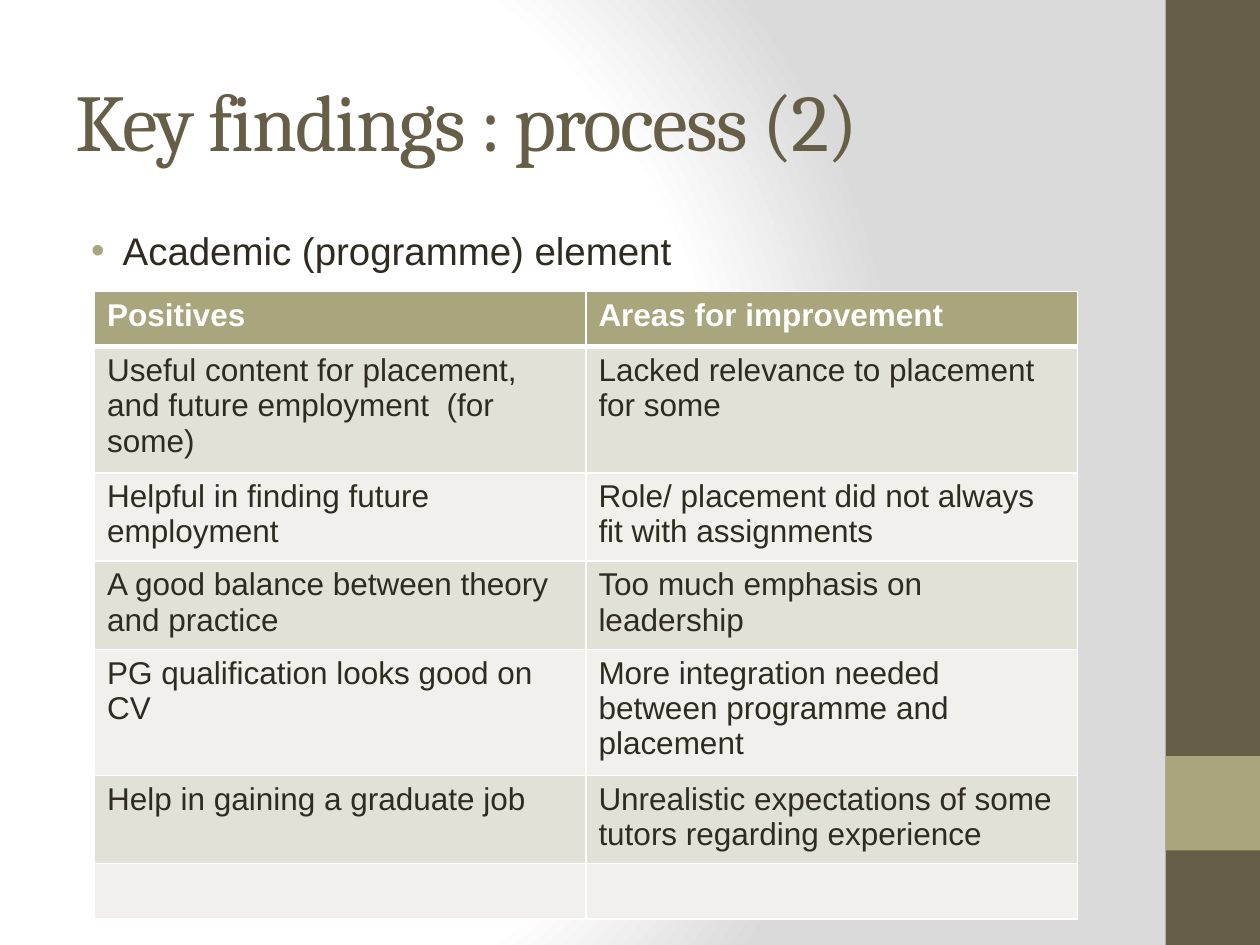
from pptx import Presentation
from pptx.dml.color import RGBColor
from pptx.enum.shapes import MSO_SHAPE as Shape
from pptx.enum.text import MSO_ANCHOR as Anchor
from pptx.oxml import parse_xml
from pptx.oxml.ns import nsdecls
from pptx.util import Pt

BROWN, OLIVE, INK, WHITE = "675E47", "A9A57C", "2F2B20", "FFFFFF"
BANDS = ["E2E1D7", "F1F0EC"]
TITLE = "Key findings : process (2)"
BULLET = "Academic (programme) element"
ROWS = [
    ("Positives", "Areas for improvement"),
    ("Useful content for placement, and future employment  (for some)",
     "Lacked relevance to placement for some"),
    ("Helpful in finding future employment",
     "Role/ placement did not always fit with assignments"),
    ("A good balance between theory and practice",
     "Too much emphasis on leadership"),
    ("PG qualification looks good on CV",
     "More integration needed between programme and placement"),
    ("Help in gaining a graduate job",
     "Unrealistic expectations of some tutors regarding experience"),
    ("", ""),
]
ROW_HEIGHTS = [31.68, 67, 49.8, 49.8, 67, 49.8, 31.68]
SIDEBAR = [(0, 540, BROWN), (432, 54, OLIVE)]  # top, height, colour
STOPS = [(0, WHITE), (75, WHITE), (100, "DADADA")]


def rgb(value):
    return RGBColor.from_string(value)


def add_span(para, text, size, color, font="Arial", bold=False):
    span = para.add_run()
    span.text = text
    span.font.size, span.font.name, span.font.bold = Pt(size), font, bold
    span.font.color.rgb = rgb(color)
    return span


def add_text_box(page, top, height, anchor):
    frame = page.shapes.add_textbox(Pt(36), Pt(top), Pt(600), Pt(height)).text_frame
    frame.word_wrap = True
    frame.vertical_anchor = anchor
    return frame.paragraphs[0]


def set_background(page):
    """Fill the page with a radial gradient."""
    page.background.fill.gradient()
    stops = "".join(f'<a:gs pos="{pos * 1000}"><a:srgbClr val="{color}"/></a:gs>'
                    for pos, color in STOPS)
    radial = parse_xml(
        f'<a:gradFill {nsdecls("a")} rotWithShape="1"><a:gsLst>{stops}</a:gsLst>'
        '<a:path path="circle"><a:fillToRect l="20000" t="50000" r="100000" b="50000"/>'
        '</a:path></a:gradFill>')
    linear = page._element.xpath(".//p:bgPr/a:gradFill")[0]
    linear.getparent().replace(linear, radial)


def set_bullet(para):
    props = para._p.get_or_add_pPr()
    props.set("marL", str(Pt(27)))
    props.set("indent", str(Pt(-18)))
    for xml in (
        f'<a:spcBef {nsdecls("a")}><a:spcPct val="20000"/></a:spcBef>',
        f'<a:buClr {nsdecls("a")}><a:srgbClr val="{OLIVE}"/></a:buClr>',
        f'<a:buFont {nsdecls("a")} typeface="Arial"/>',
        f'<a:buChar {nsdecls("a")} char="•"/>',
    ):
        props.append(parse_xml(xml))


def set_borders(cell, top, bottom):
    props = cell._tc.get_or_add_tcPr()
    for side, width in (("L", 1), ("R", 1), ("T", top), ("B", bottom)):
        props.append(parse_xml(
            f'<a:ln{side} {nsdecls("a")} w="{Pt(width)}"><a:solidFill>'
            f'<a:srgbClr val="{WHITE}"/></a:solidFill></a:ln{side}>'))


def add_findings(page):
    table = page.shapes.add_table(len(ROWS), 2, Pt(54), Pt(166.5), Pt(561.6),
                                  Pt(sum(ROW_HEIGHTS))).table
    for r, texts in enumerate(ROWS):
        table.rows[r].height = Pt(ROW_HEIGHTS[r])
        header = r == 0
        for c, text in enumerate(texts):
            cell = table.cell(r, c)
            set_borders(cell, top=3 if r == 1 else 1, bottom=3 if header else 1)
            cell.fill.solid()
            cell.fill.fore_color.rgb = rgb(OLIVE if header else BANDS[(r - 1) % 2])
            if text:
                add_span(cell.text_frame.paragraphs[0], text, 18,
                         WHITE if header else INK, bold=header)


def main():
    deck = Presentation()
    deck.slide_width, deck.slide_height = Pt(720), Pt(540)
    page = deck.slides.add_slide(deck.slide_layouts[6])
    set_background(page)
    for top, height, color in SIDEBAR:
        bar = page.shapes.add_shape(Shape.RECTANGLE, Pt(666), Pt(top), Pt(54), Pt(height))
        bar.shadow.inherit = False
        bar.fill.solid()
        bar.fill.fore_color.rgb = rgb(color)
        bar.line.fill.background()

    title = add_text_box(page, 21.6, 93.6, Anchor.MIDDLE)
    span = add_span(title, TITLE, 46, BROWN, font="Cambria")
    span._r.get_or_add_rPr().set("spc", "-100")

    bullet = add_text_box(page, 126, 378, Anchor.TOP)
    set_bullet(bullet)
    add_span(bullet, BULLET, 22, INK)

    add_findings(page)
    deck.save("out.pptx")


if __name__ == "__main__":
    main()
